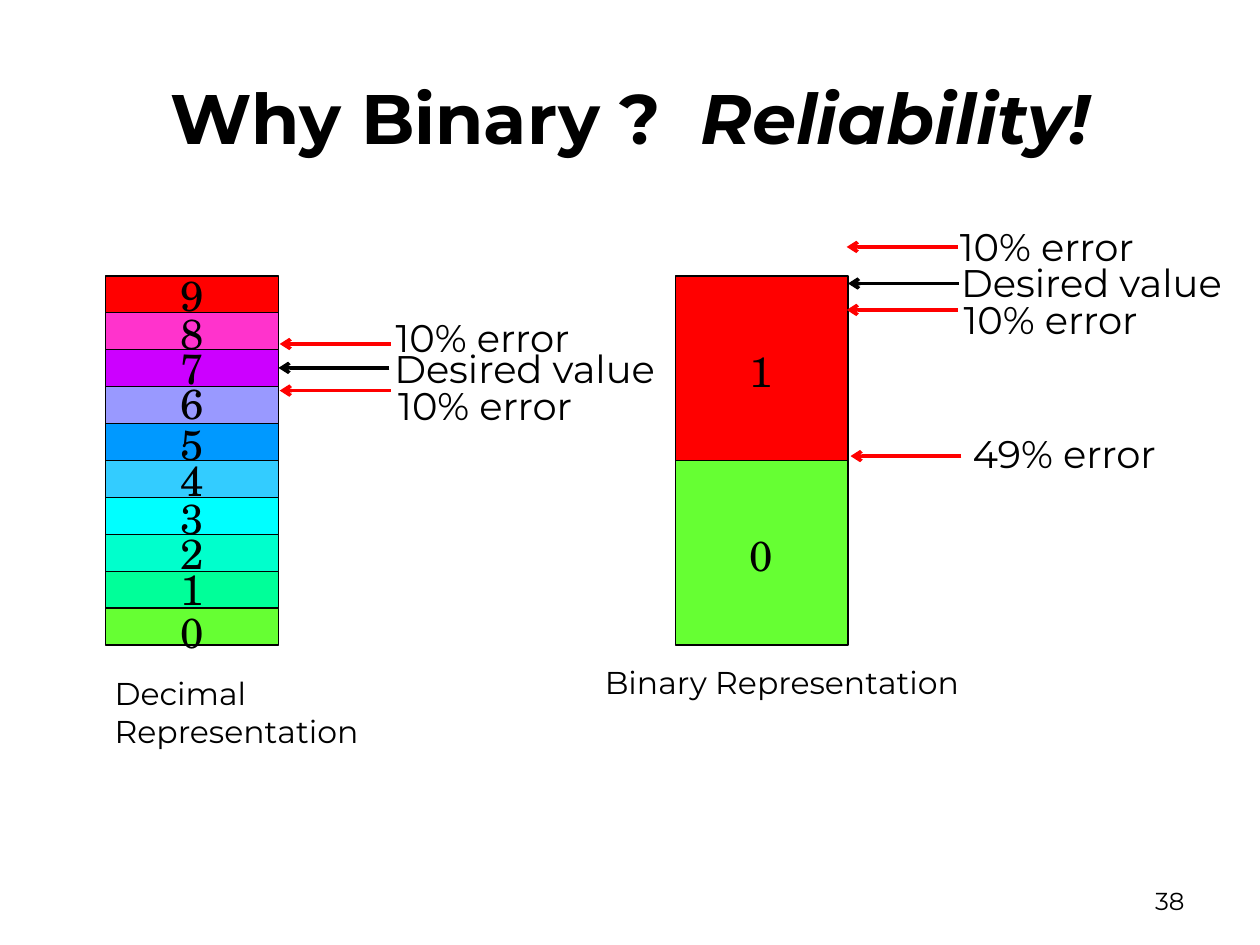
from lxml.etree import SubElement
from pptx import Presentation
from pptx.dml.color import RGBColor
from pptx.enum.shapes import MSO_CONNECTOR, MSO_SHAPE
from pptx.enum.text import MSO_ANCHOR, PP_ALIGN
from pptx.oxml.ns import qn
from pptx.util import Inches, Pt

COLORS = {"black": "000000", "red": "FF0000", "green": "66FF33"}
SANS = "Montserrat"
SERIF = "TeX Gyre Schola"
WIDE, NORMAL = (0.12, 0.06), (0.1, 0.05)

BAR_TOP, BAR_WIDTH, BAR_HEIGHT = 2.19, 1.37, 2.93
DECIMAL_LEFT, BINARY_LEFT = 0.84, 5.36

# Digit, fill and top of the digit's text box, from the top band down
DECIMAL_BANDS = [
    ("9", COLORS["red"], 2.08), ("8", "FF33CC", 2.38),
    ("7", "CC00FF", 2.66), ("6", "9999FF", 2.94),
    ("5", "0099FF", 3.26), ("4", "33CCFF", 3.55),
    ("3", "00FFFF", 3.85), ("2", "00FFCC", 4.13),
    ("1", "00FF99", 4.41), ("0", COLORS["green"], 4.75),
]
BINARY_BANDS = [("1", COLORS["red"], 2.68), ("0", COLORS["green"], 4.14)]

# Label, colour, arrow tip (x, y), label box (left, top, width), insets
CALLOUTS = [
    ("Desired value", "black", (2.21, 2.92), (3.01, 2.68, 2.36), WIDE),
    ("10% error", "red", (2.22, 3.1), (3.04, 2.97, 1.68), WIDE),
    ("10% error", "red", (2.22, 2.73), (3.02, 2.43, 2.25), WIDE),
    ("Desired value", "black", (6.73, 2.25), (7.53, 2.01, 2.43), NORMAL),
    ("10% error", "red", (6.72, 2.46), (7.55, 2.3, 2.43), NORMAL),
    ("49% error", "red", (6.75, 3.62), (7.6, 3.35, 1.94), WIDE),
    ("10% error", "red", (6.72, 1.96), (7.52, 1.72, 2.43), NORMAL),
]
ARROW_LENGTH = 0.88


def rgb(value):
    return RGBColor.from_string(value)


def add_span(para, text, size, font=SANS, bold=False, italic=False):
    span = para.add_run()
    span.text = text
    span.font.name = font
    span.font.size = Pt(size)
    span.font.bold = bold
    span.font.italic = italic
    span.font.color.rgb = rgb(COLORS["black"])


def add_text(page, text, place, size, font=SANS, align=PP_ALIGN.LEFT,
             insets=WIDE, anchor=MSO_ANCHOR.TOP):
    box = page.shapes.add_textbox(*map(Inches, place))
    frame = box.text_frame
    frame.word_wrap = True
    frame.vertical_anchor = anchor
    frame.margin_left = frame.margin_right = Inches(insets[0])
    frame.margin_top = frame.margin_bottom = Inches(insets[1])
    para = frame.paragraphs[0]
    para.alignment = align
    add_span(para, text, size, font)


def add_title(page):
    title = page.shapes.title
    title.left, title.top = Inches(0.5), Inches(0.3)
    title.width, title.height = Inches(9), Inches(1.25)
    title.text_frame.vertical_anchor = MSO_ANCHOR.MIDDLE
    para = title.text_frame.paragraphs[0]
    para.alignment = PP_ALIGN.CENTER
    add_span(para, "Why Binary ?  ", 40, bold=True)
    add_span(para, "Reliability!", 40, bold=True, italic=True)


def add_bar(page, left, bands, digit_left, digit_width):
    """Stack equal bands to the full bar height, then set the digits on top."""
    height = BAR_HEIGHT / len(bands)
    for index, (_, fill, _) in enumerate(bands):
        band = page.shapes.add_shape(
            MSO_SHAPE.RECTANGLE, Inches(left), Inches(BAR_TOP + index * height),
            Inches(BAR_WIDTH), Inches(height))
        band.shadow.inherit = False
        band.fill.solid()
        band.fill.fore_color.rgb = rgb(fill)
        band.line.color.rgb = rgb(COLORS["black"])
        band.line.width = Pt(0.75)
    for digit, _, top in bands:
        add_text(page, digit, (digit_left, top, digit_width, 0.53), 24,
                 SERIF, PP_ALIGN.CENTER)


def add_arrow(page, tip, color):
    """Draw a level arrow that points left to the tip."""
    x, y = tip
    arrow = page.shapes.add_connector(
        MSO_CONNECTOR.STRAIGHT, Inches(x + ARROW_LENGTH), Inches(y),
        Inches(x), Inches(y))
    arrow.line.color.rgb = rgb(color)
    arrow.line.width = Pt(2)
    SubElement(arrow.line._get_or_add_ln(), qn("a:tailEnd"), type="arrow")
    SubElement(arrow._element.spPr, qn("a:effectLst"))


def main():
    deck = Presentation()
    deck.slide_width, deck.slide_height = Inches(10), Inches(7.5)
    page = deck.slides.add_slide(deck.slide_layouts[5])
    add_title(page)
    add_bar(page, BINARY_LEFT, BINARY_BANDS, BINARY_LEFT, BAR_WIDTH)
    add_bar(page, DECIMAL_LEFT, DECIMAL_BANDS, 1.05, 0.95)
    for label, color, tip, (left, top, width), insets in CALLOUTS:
        add_arrow(page, tip, COLORS[color])
        add_text(page, label, (left, top, width, 0.48), 22, insets=insets)
    add_text(page, "Decimal Representation", (0.79, 5.29, 3.27, 1.1), 18)
    add_text(page, "Binary Representation", (4.68, 5.2, 3.27, 1.1), 18)
    add_text(page, "38", (7.17, 6.95, 2.33, 0.4), 14, align=PP_ALIGN.RIGHT,
             insets=NORMAL, anchor=MSO_ANCHOR.MIDDLE)
    deck.save("out.pptx")


if __name__ == "__main__":
    main()
